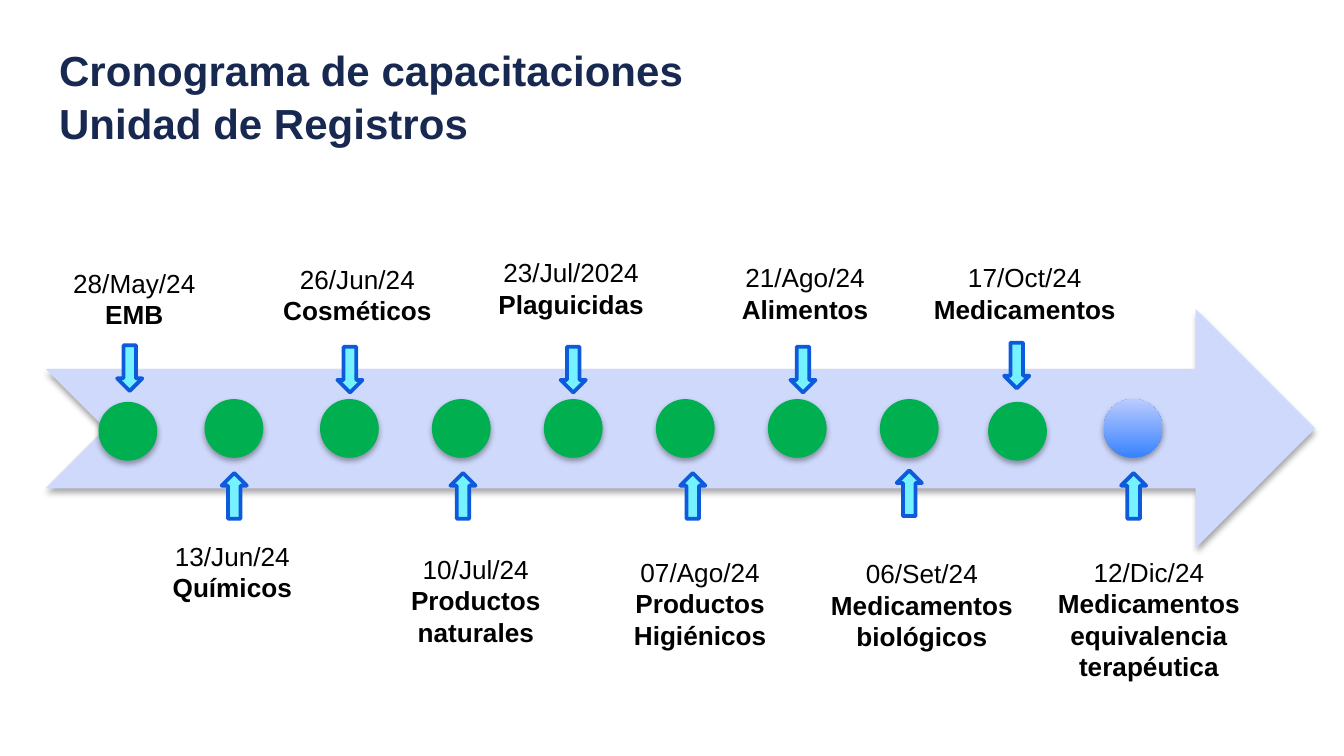
import pptx
import pptx.dml.color
import pptx.enum.shapes
import pptx.enum.text
import pptx.oxml
import pptx.oxml.ns
import pptx.util

Pt = pptx.util.Pt
SHAPE = pptx.enum.shapes.MSO_SHAPE
ALIGN = pptx.enum.text.PP_ALIGN

NAVY, GREEN, BAND = "182951", "00B050", "CFD9FB"
ARROW_FILL, ARROW_LINE = "76F2FF", "0D5BDC"
PENDING = ("3782FF", "BBCBFF")

DOT, ARROW_W, ARROW_H = 31.5, 13.5, 24.5
LABEL_W, LABEL_H = 134, 41

# date, topic, then dot, arrow and label positions: centre x and top y
MILESTONES = [
    ("28/May/24", "EMB", (44, 49.7), (45, 19.4), (47.5, -26)),
    ("13/Jun/24", "Químicos", (100.8, 48.2), (101, 87.8), (100, 120.2)),
    ("26/Jun/24", "Cosméticos", (162.7, 48.2), (163, 20.2), (167, -28)),
    ("10/Jul/24", "Productos naturales", (222.6, 48.2), (223.5, 87.8), (230.4, 127.4)),
    ("23/Jul/2024", "Plaguicidas", (282.6, 48.2), (282.6, 20.2), (281.5, -31.7)),
    ("07/Ago/24", "Productos Higiénicos", (342.6, 48.2), (346.6, 87.8), (350.6, 129)),
    ("21/Ago/24", "Alimentos", (402.6, 48.2), (405.7, 20.2), (406.8, -29)),
    ("06/Set/24", "Medicamentos biológicos", (462.6, 48.2), (462.6, 86.4), (469.4, 129.6)),
    ("17/Oct/24", "Medicamentos", (520.6, 49.7), (520.2, 18), (524.5, -29)),
    ("12/Dic/24", "Medicamentos equivalencia terapéutica", (582.5, 48.2), (582.8, 87.8), (591, 129)),
]


def rgb(value):
    return pptx.dml.color.RGBColor.from_string(value)


def write(paragraph, text, size=14, color="000000", bold=False, align=ALIGN.CENTER):
    paragraph.text = text
    paragraph.alignment = align
    for run in paragraph.runs:
        run.font.name = "Arial"
        run.font.size = Pt(size)
        run.font.bold = bold
        run.font.color.rgb = rgb(color)


def soften(shape):
    shape._element.spPr.append(pptx.oxml.parse_xml(
        f'<a:effectLst {pptx.oxml.ns.nsdecls("a")}>'
        f'<a:outerShdw blurRad="{Pt(3.1)}" dist="{Pt(1.8)}" dir="5400000" rotWithShape="0">'
        '<a:srgbClr val="000000"><a:alpha val="35000"/></a:srgbClr>'
        '</a:outerShdw></a:effectLst>'))


def add_figure(slide, kind, left, top, width, height, fill, line=None, shadow=False):
    figure = slide.shapes.add_shape(kind, Pt(left), Pt(top), Pt(width), Pt(height))
    if isinstance(fill, tuple):
        figure.fill.gradient()
        figure.fill.gradient_angle = 90
        for stop, color in zip(figure.fill.gradient_stops, fill):
            stop.color.rgb = rgb(color)
    else:
        figure.fill.solid()
        figure.fill.fore_color.rgb = rgb(fill)
    if line:
        figure.line.color.rgb = rgb(line)
        figure.line.width = Pt(2)
    else:
        figure.line.fill.background()
    if shadow:
        soften(figure)
    else:
        figure.shadow.inherit = False
    return figure


def place_heading(slide, left, top, width, height):
    heading = slide.shapes.title
    heading.left, heading.top = Pt(left), Pt(top)
    heading.width, heading.height = Pt(width), Pt(height)
    frame = heading.text_frame
    frame.auto_size = pptx.enum.text.MSO_AUTO_SIZE.NONE
    frame.vertical_anchor = pptx.enum.text.MSO_ANCHOR.TOP
    frame.margin_left = frame.margin_right = Pt(7.2)
    frame.margin_top = frame.margin_bottom = Pt(7.2)
    paragraph = frame.paragraphs[0]
    write(paragraph, "Cronograma de capacitaciones\vUnidad de Registros",
          size=22.5, color=NAVY, bold=True, align=ALIGN.LEFT)
    paragraph.line_spacing = 1.06


def place_label(slide, center, top, date, topic):
    label = slide.shapes.add_textbox(Pt(center - LABEL_W / 2), Pt(top), Pt(LABEL_W), Pt(LABEL_H))
    frame = label.text_frame
    frame.word_wrap = True
    frame.auto_size = pptx.enum.text.MSO_AUTO_SIZE.SHAPE_TO_FIT_TEXT
    write(frame.paragraphs[0], date)
    write(frame.add_paragraph(), topic, bold=True)


def place_timeline(slide, left, top, width, height):
    add_figure(slide, SHAPE.NOTCHED_RIGHT_ARROW, left, top, width, height, BAND, shadow=True)
    for date, topic, dot, arrow, label in MILESTONES:
        dot_fill = PENDING if date == MILESTONES[-1][0] else GREEN
        add_figure(slide, SHAPE.OVAL, left + dot[0] - DOT / 2, top + dot[1],
                   DOT, DOT, dot_fill, shadow=True)
        pointer = add_figure(slide, SHAPE.DOWN_ARROW, left + arrow[0] - ARROW_W / 2,
                             top + arrow[1], ARROW_W, ARROW_H, ARROW_FILL, line=ARROW_LINE)
        if arrow[1] > height / 2:
            pointer.rotation = 180
        place_label(slide, left + label[0], top + label[1], date, topic)


def main():
    deck = pptx.Presentation()
    deck.slide_width, deck.slide_height = Pt(720), Pt(405)
    slide = deck.slides.add_slide(deck.slide_layouts[5])
    place_heading(slide, 24.5, 15, 394.5, 45.5)
    place_timeline(slide, 24.5, 165.6, 680, 128)
    deck.save("out.pptx")


if __name__ == "__main__":
    main()
